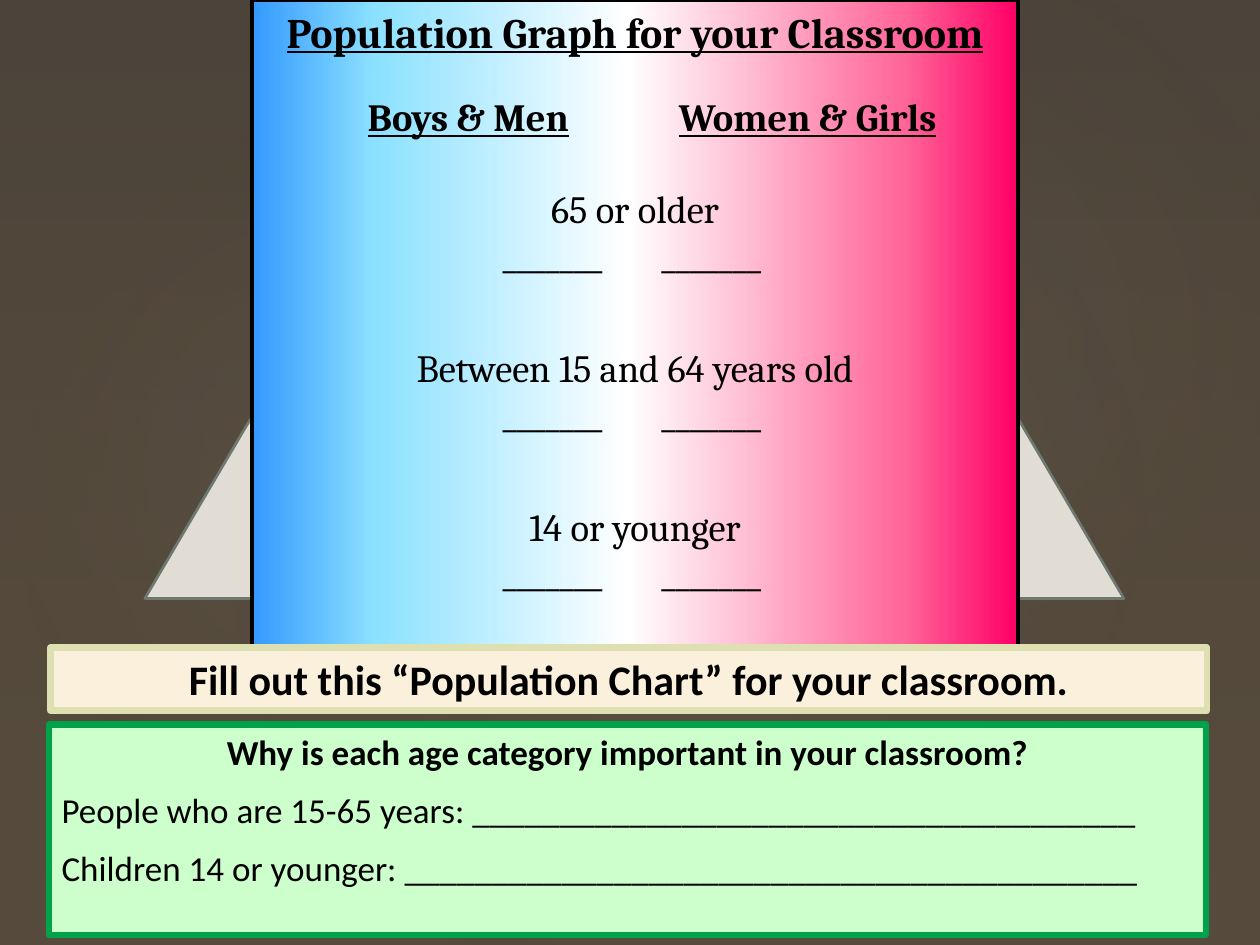
from lxml.etree import SubElement
from pptx import Presentation
from pptx.dml.color import RGBColor
from pptx.enum.shapes import MSO_SHAPE
from pptx.enum.text import MSO_ANCHOR, PP_ALIGN
from pptx.oxml import parse_xml
from pptx.oxml.ns import nsdecls, qn
from pptx.util import Inches, Pt

COLORS = {
    "background": "564B3C", "shade": "3C3638", "glow": "AFA6AA",
    "triangle": "E1DCD4", "triangle_line": "6D7871",
    "green": "CCFFCC", "green_line": "00A249",
    "cream": "FAF0DB", "cream_line": "DFE0B1",
    "blue": "3399FF", "sky": "8BE1FF", "white": "FFFFFF",
    "pink": "FF6699", "magenta": "FF0066", "black": "000000",
}


def color(name):
    return RGBColor.from_string(COLORS[name])


def add_box(s, kind, box, fill=None, line=None, width=0):
    sp = s.shapes.add_shape(kind, *(Inches(v) for v in box))
    sp.shadow.inherit = False
    if fill:
        sp.fill.solid()
        sp.fill.fore_color.rgb = color(fill)
    if line:
        sp.line.color.rgb = color(line)
        sp.line.width = Pt(width)
    else:
        sp.line.fill.background()
    tf = sp.text_frame
    tf.word_wrap = True
    tf.vertical_anchor = MSO_ANCHOR.TOP
    return sp


def set_gradient(sp, stops, angle=None):
    sp.fill.background()
    grad = parse_xml(f'<a:gradFill {nsdecls("a")} rotWithShape="1"/>')
    stop_list = SubElement(grad, qn("a:gsLst"))
    for position, name, alpha in stops:
        gs = SubElement(stop_list, qn("a:gs"), pos=str(position * 1000))
        rgb = SubElement(gs, qn("a:srgbClr"), val=COLORS[name])
        if alpha < 100:
            SubElement(rgb, qn("a:alpha"), val=str(alpha * 1000))
    if angle is None:
        circle = SubElement(grad, qn("a:path"), path="circle")
        SubElement(circle, qn("a:fillToRect"), l="50000", t="50000", r="50000", b="50000")
    else:
        SubElement(grad, qn("a:lin"), ang=str(angle * 60000), scaled="0")
    properties = sp.fill._xPr
    properties.replace(properties.find(qn("a:noFill")), grad)


def add_line(tf, runs, size, font, bold=False, underline=False, before=0,
             align=PP_ALIGN.CENTER, tabs=()):
    p = tf.paragraphs[0]
    if p.runs:
        p = tf.add_paragraph()
    p.alignment = align
    p.space_before = Pt(before)
    if tabs:
        tab_list = SubElement(p._p.get_or_add_pPr(), qn("a:tabLst"))
        for tab in tabs:
            SubElement(tab_list, qn("a:tab"), pos=str(Inches(tab)), algn="l")
    for text in runs:
        r = p.add_run()
        r.text = text
        r.font.name = font
        r.font.size = Pt(size)
        r.font.bold = bold
        r.font.underline = underline and text != "\t"
        r.font.color.rgb = color("black")


def add_backdrop(s, box):
    s.background.fill.solid()
    s.background.fill.fore_color.rgb = color("background")
    sp = add_box(s, MSO_SHAPE.RECTANGLE, box)
    set_gradient(sp, [(0, "shade", 36), (100, "background", 10)], 90)
    glows = [
        ((1.5, 1.14, 7.92, 6.24), 328.7, 7),
        ((-0.3, 1.28, 6.06, 4.9), 294.3, 8),
        ((3.58, 0.13, 7.09, 5.2), 328.7, 8),
    ]
    for (left, top, width, height), rotation, alpha in glows:
        sp = add_box(s, MSO_SHAPE.OVAL, (box[0] + left, box[1] + top, width, height))
        sp.rotation = rotation
        set_gradient(sp, [(0, "glow", alpha), (58, "background", 0)])


def add_triangles(s, box):
    left, top, width, height = box
    side = 1.67
    for x in (left + width - side, left):
        add_box(s, MSO_SHAPE.ISOSCELES_TRIANGLE, (x, top, side, height),
                "triangle", "triangle_line", 1.5)


def add_questions(s, box):
    tf = add_box(s, MSO_SHAPE.RECTANGLE, box, "green", "green_line", 3.75).text_frame
    add_line(tf, ["Why is each age category important in your classroom?"],
             20, "Calibri", bold=True)
    for label, blanks in (("People who are 15-65 years: ", 38),
                          ("Children 14 or younger: ", 42)):
        add_line(tf, [label + "_" * blanks], 20, "Calibri", before=9, align=PP_ALIGN.LEFT)


def add_population_panel(s, box):
    sp = add_box(s, MSO_SHAPE.RECTANGLE, box, line="black", width=1.75)
    set_gradient(sp, [(0, "blue", 100), (16, "sky", 100), (49, "white", 100),
                      (85, "pink", 100), (100, "magenta", 100)], 0)
    tf = sp.text_frame
    add_line(tf, ["Population Graph for your Classroom"], 24, "Cambria",
             bold=True, underline=True)
    add_line(tf, ["\t", "Boys & Men", "\t", "Women & Girls"], 22, "Cambria",
             bold=True, underline=True, before=21, align=PP_ALIGN.LEFT, tabs=(0.82, 3.29))
    for label, before in (("65 or older", 26), ("Between 15 and 64 years old", 38),
                          ("14 or younger", 38)):
        add_line(tf, [label], 22, "Cambria", before=before)
        add_line(tf, ["\t", "_" * 7, "\t", "_" * 7], 22, "Cambria",
                 align=PP_ALIGN.LEFT, tabs=(1.89, 3.15))


def add_instruction(s, box):
    tf = add_box(s, MSO_SHAPE.RECTANGLE, box, "cream", "cream_line", 3.75).text_frame
    add_line(tf, ["Fill out this “Population Chart” for your classroom."],
             24, "Calibri", bold=True)


def main():
    prs = Presentation()
    prs.slide_width, prs.slide_height = Inches(10), Inches(7.5)
    s = prs.slides.add_slide(prs.slide_layouts[6])
    add_backdrop(s, (0, 0, 10, 7.5))
    add_triangles(s, (1.15, 3.33, 7.77, 1.42))
    add_questions(s, (0.39, 5.75, 9.18, 1.67))
    add_population_panel(s, (2, 0, 6.08, 5.22))
    add_instruction(s, (0.4, 5.14, 9.18, 0.5))
    prs.save("out.pptx")


if __name__ == "__main__":
    main()
